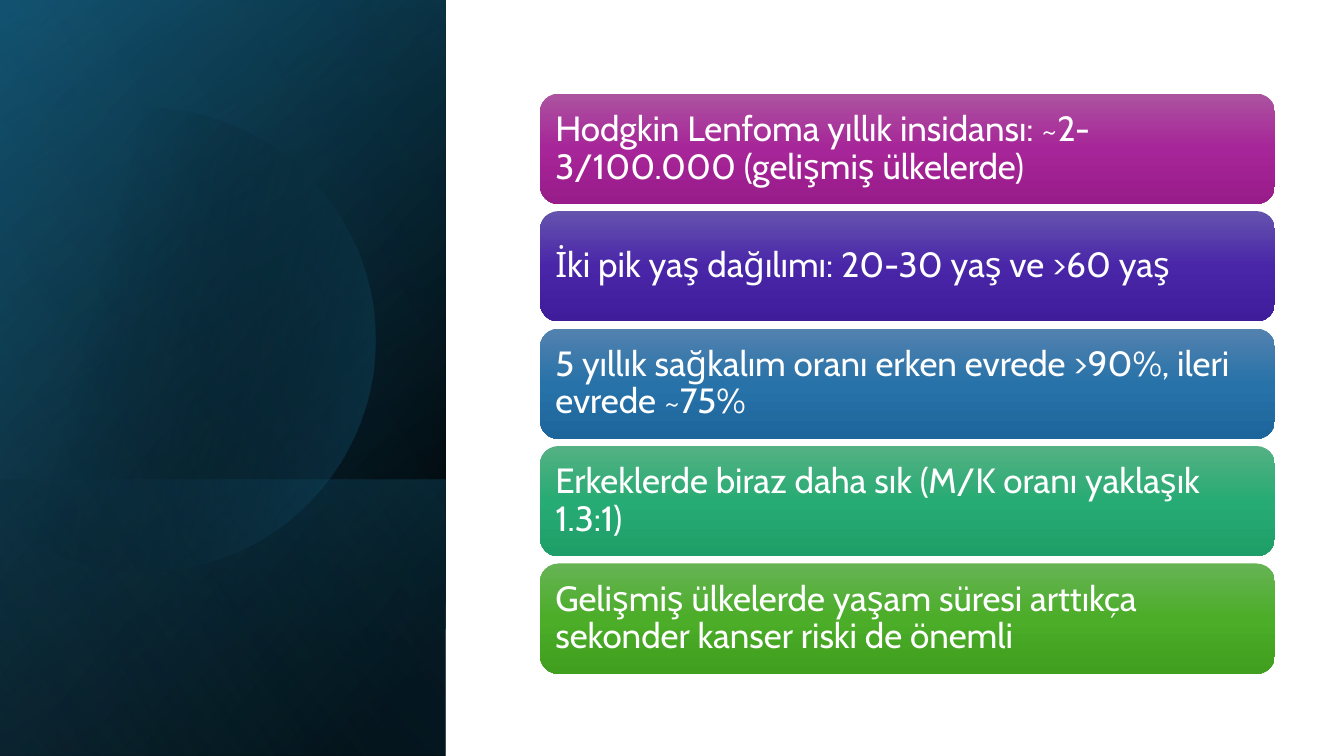
from math import acos, cos, sin
from typing import NamedTuple

from lxml.etree import SubElement
from pptx import Presentation
from pptx.dml.color import RGBColor
from pptx.enum.shapes import MSO_SHAPE as Shp
from pptx.enum.text import MSO_ANCHOR as Anchor, PP_ALIGN as Align
from pptx.oxml.ns import qn
from pptx.util import Cm, Pt

BLACK = RGBColor(0x00, 0x00, 0x00)
WHITE = RGBColor(0xFF, 0xFF, 0xFF)
NAVY = RGBColor(0x10, 0x48, 0x62)
TEAL = RGBColor(0x15, 0x60, 0x82)
SKY = RGBColor(0x46, 0xB1, 0xE1)
PURPLE = RGBColor(0xAC, 0x53, 0xA0), RGBColor(0xA6, 0x25, 0x98), RGBColor(0x99, 0x1C, 0x8B)
INDIGO = RGBColor(0x65, 0x53, 0xAE), RGBColor(0x49, 0x26, 0xA8), RGBColor(0x3E, 0x1C, 0x9A)
BLUE = RGBColor(0x53, 0x82, 0xAF), RGBColor(0x27, 0x72, 0xA9), RGBColor(0x1D, 0x66, 0x9C)
JADE = RGBColor(0x54, 0xB1, 0x83), RGBColor(0x27, 0xAB, 0x74), RGBColor(0x1E, 0x9E, 0x68)
GREEN = RGBColor(0x66, 0xB3, 0x54), RGBColor(0x4B, 0xAD, 0x28), RGBColor(0x40, 0x9F, 0x1E)

SLIDE_W, SLIDE_H = 33.87, 19.05
PANEL_W = 11.23
LOWER_TOP = 12.09
CIRCLE_X, CIRCLE_Y, CIRCLE_R = 3.63, 8.56, 5.84
CARD_X, CARD_Y, CARD_W, CARD_H, CARD_STEP = 13.61, 2.36, 18.52, 2.78, 2.96


class Stop(NamedTuple):
    pos: int
    color: RGBColor
    opacity: int = 100


class Panel(NamedTuple):
    top: float
    angle: int
    stops: tuple[Stop, ...]


class Card(NamedTuple):
    text: str
    colors: tuple[RGBColor, ...]


BACK_PANELS = (
    Panel(0, 220, (Stop(8, BLACK), Stop(100, NAVY))),
    Panel(0, 240, (Stop(0, BLACK, 0), Stop(99, TEAL, 46))),
    Panel(LOWER_TOP, 140, (Stop(2, TEAL, 29), Stop(100, BLACK, 30))),
)
FRONT_PANEL = Panel(0, 150, (Stop(0, BLACK, 0), Stop(99, SKY, 11)))
CIRCLE_STOPS = Stop(29, BLACK, 0), Stop(100, TEAL, 43)

CARDS = (
    Card("Hodgkin Lenfoma yıllık insidansı: ~2-3/100.000 (gelişmiş ülkelerde)", PURPLE),
    Card("İki pik yaş dağılımı: 20-30 yaş ve >60 yaş", INDIGO),
    Card("5 yıllık sağkalım oranı erken evrede >90%, ileri evrede ~75%", BLUE),
    Card("Erkeklerde biraz daha sık (M/K oranı yaklaşık 1.3:1)", JADE),
    Card("Gelişmiş ülkelerde yaşam süresi arttıkça sekonder kanser riski de önemli", GREEN),
)


def set_gradient(sp, stops: tuple[Stop, ...], angle: int) -> None:
    """Fill with a linear gradient, angle clockwise; drop outline and shadow."""
    sp.shadow.inherit = False
    sp.line.fill.background()
    sp.fill.gradient()
    grad = sp._element.spPr.find(qn("a:gradFill"))
    for child in list(grad):
        grad.remove(child)
    stop_list = SubElement(grad, qn("a:gsLst"))
    for stop in stops:
        gs = SubElement(stop_list, qn("a:gs"), pos=str(stop.pos * 1000))
        color = SubElement(gs, qn("a:srgbClr"), val=str(stop.color))
        if stop.opacity < 100:
            SubElement(color, qn("a:alpha"), val=str(stop.opacity * 1000))
    SubElement(grad, qn("a:lin"), ang=str(angle * 60000), scaled="0")


def add_panel(s, panel: Panel) -> None:
    sp = s.shapes.add_shape(Shp.RECTANGLE, Cm(0), Cm(panel.top),
                            Cm(PANEL_W), Cm(SLIDE_H - panel.top))
    set_gradient(sp, panel.stops, panel.angle)


def add_circle(s, steps: int = 120) -> None:
    """Draw the circle cut off at the slide's left edge."""
    limit = acos(-CIRCLE_X / CIRCLE_R)
    angles = [limit * (2 * i / steps - 1) for i in range(steps + 1)]
    points = [(Cm(max(0, CIRCLE_X + CIRCLE_R * cos(a))), Cm(CIRCLE_Y + CIRCLE_R * sin(a)))
              for a in angles]
    builder = s.shapes.build_freeform(*points[0])
    builder.add_line_segments(points[1:], close=True)
    set_gradient(builder.convert_to_shape(), CIRCLE_STOPS, 14)


def add_card(s, card: Card, top: float) -> None:
    sp = s.shapes.add_shape(Shp.ROUNDED_RECTANGLE, Cm(CARD_X), Cm(top),
                            Cm(CARD_W), Cm(CARD_H))
    set_gradient(sp, tuple(Stop(50 * i, c) for i, c in enumerate(card.colors)), 90)
    tf = sp.text_frame
    frame_format = {"word_wrap": True, "vertical_anchor": Anchor.MIDDLE}
    frame_format |= {f"margin_{side}": Cm(0.25) for side in ("left", "right", "top", "bottom")}
    for name, value in frame_format.items():
        setattr(tf, name, value)
    p = tf.paragraphs[0]
    p.alignment = Align.LEFT
    p.line_spacing = 0.9
    r = p.add_run()
    r.text = card.text
    for name, value in {"name": "Cabin", "size": Pt(25)}.items():
        setattr(r.font, name, value)
    r.font.color.rgb = WHITE


def main() -> None:
    prs = Presentation()
    prs.slide_width, prs.slide_height = Cm(SLIDE_W), Cm(SLIDE_H)
    s = prs.slides.add_slide(prs.slide_layouts[6])
    for panel in BACK_PANELS:
        add_panel(s, panel)
    add_circle(s)
    add_panel(s, FRONT_PANEL)
    for i, card in enumerate(CARDS):
        add_card(s, card, CARD_Y + i * CARD_STEP)
    prs.save("out.pptx")


if __name__ == "__main__":
    main()
